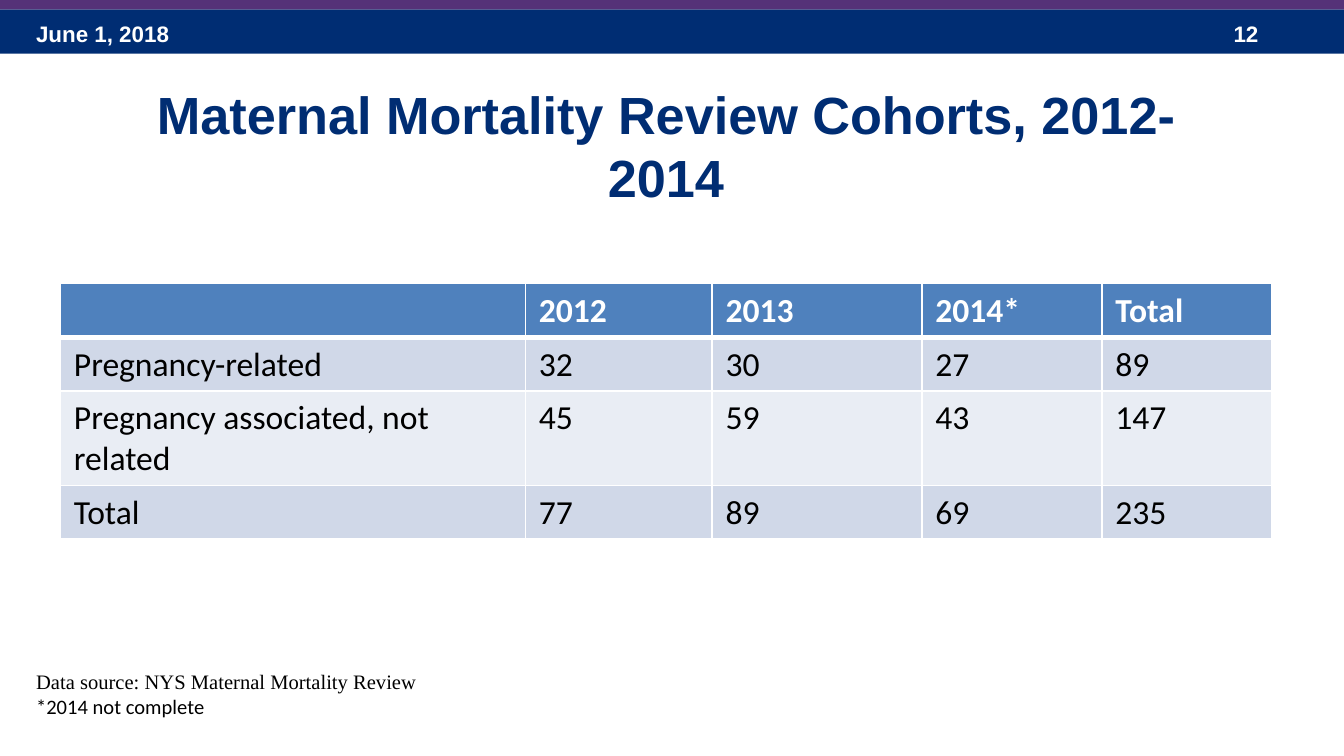
from lxml import etree
from pptx import Presentation
from pptx.dml.color import RGBColor
from pptx.enum.shapes import MSO_SHAPE
from pptx.enum.text import MSO_ANCHOR, PP_ALIGN
from pptx.oxml.ns import qn
from pptx.util import Inches, Pt

COLORS = {
    "navy": "002D73", "purple": "553278", "header": "4F81BD",
    "band_dark": "D0D8E8", "band_light": "E9EDF4",
    "white": "FFFFFF", "black": "000000",
}
TITLE = "Maternal Mortality Review Cohorts, 2012-2014"
BANDS = [("navy", 0.07, 0.33), ("purple", -0.02, 0.09)]  # colour, top, height
BAND_LABELS = [("June 1, 2018", 0.17, 2.33), ("12", 9.08, 0.75)]  # text, left, width
COHORTS = [
    ["", "2012", "2013", "2014*", "Total"],
    ["Pregnancy-related", "32", "30", "27", "89"],
    ["Pregnancy associated, not related", "45", "59", "43", "147"],
    ["Total", "77", "89", "69", "235"],
]
COLUMN_WIDTHS = [3.46, 1.39, 1.56, 1.34, 1.26]
ROW_HEIGHTS = [0.4, 0.4, 0.7, 0.4]
FOOTNOTES = [
    ("Data source: NYS Maternal Mortality Review", "Times New Roman"),
    ("*2014 not complete", "Calibri"),
]


def color(name):
    return RGBColor.from_string(COLORS[name])


def add_run(paragraph, text, size, font, color_name, bold=False):
    run = paragraph.add_run()
    run.text = text
    run.font.size = Pt(size)
    run.font.name = font
    run.font.bold = bold
    run.font.color.rgb = color(color_name)


def add_text_frame(slide, left, top, width, height):
    box = slide.shapes.add_textbox(Inches(left), Inches(top), Inches(width), Inches(height))
    box.text_frame.word_wrap = True
    return box.text_frame


def add_band(slide, color_name, top, height):
    band = slide.shapes.add_shape(
        MSO_SHAPE.RECTANGLE, 0, Inches(top), Inches(10), Inches(height))
    band.shadow.inherit = False
    band.fill.solid()
    band.fill.fore_color.rgb = color(color_name)
    band.line.fill.background()


def set_borders(cell, top, bottom):
    """Draw white cell borders; top and bottom widths are in points."""
    properties = cell._tc.get_or_add_tcPr()
    widths = {"a:lnL": 1, "a:lnR": 1, "a:lnT": top, "a:lnB": bottom}
    for position, (tag, width) in enumerate(widths.items()):
        line = etree.Element(qn(tag), w=str(Pt(width)))
        fill = etree.SubElement(line, qn("a:solidFill"))
        etree.SubElement(fill, qn("a:srgbClr"), val=COLORS["white"])
        properties.insert(position, line)


def add_cohort_table(slide):
    table = slide.shapes.add_table(
        len(COHORTS), len(COLUMN_WIDTHS), Inches(0.45), Inches(2.11),
        Inches(sum(COLUMN_WIDTHS)), Inches(sum(ROW_HEIGHTS))).table
    for column, width in zip(table.columns, COLUMN_WIDTHS):
        column.width = Inches(width)
    for r, (values, height) in enumerate(zip(COHORTS, ROW_HEIGHTS)):
        table.rows[r].height = Inches(height)
        is_header = r == 0
        row_fill = "header" if is_header else "band_dark" if r % 2 else "band_light"
        for c, value in enumerate(values):
            cell = table.cell(r, c)
            cell.fill.solid()
            cell.fill.fore_color.rgb = color(row_fill)
            set_borders(cell, top=3 if r == 1 else 1, bottom=3 if is_header else 1)
            if value:
                add_run(cell.text_frame.paragraphs[0], value, 18, "Calibri",
                        "white" if is_header else "black", is_header)


def main():
    prs = Presentation()
    prs.slide_width = Inches(10)
    prs.slide_height = prs.slide_width * 9 // 16
    slide = prs.slides.add_slide(prs.slide_layouts[5])

    for band in BANDS:
        add_band(slide, *band)
    for text, left, width in BAND_LABELS:
        frame = add_text_frame(slide, left, 0.1, width, 0.3)
        frame.vertical_anchor = MSO_ANCHOR.MIDDLE
        add_run(frame.paragraphs[0], text, 12, "Arial", "white", True)

    title = slide.shapes.title
    title.left, title.top = Inches(0.96), Inches(0.56)
    title.width, title.height = Inches(7.99), Inches(1.04)
    title.text_frame.word_wrap = True
    title.text_frame.vertical_anchor = MSO_ANCHOR.MIDDLE
    heading = title.text_frame.paragraphs[0]
    heading.alignment = PP_ALIGN.CENTER
    add_run(heading, TITLE, 28, "Arial", "navy", True)

    add_cohort_table(slide)

    notes = add_text_frame(slide, 0.17, 4.93, 5.58, 0.47)
    for i, (text, font) in enumerate(FOOTNOTES):
        paragraph = notes.add_paragraph() if i else notes.paragraphs[0]
        add_run(paragraph, text, 11, font, "black")

    prs.save("out.pptx")


if __name__ == "__main__":
    main()
